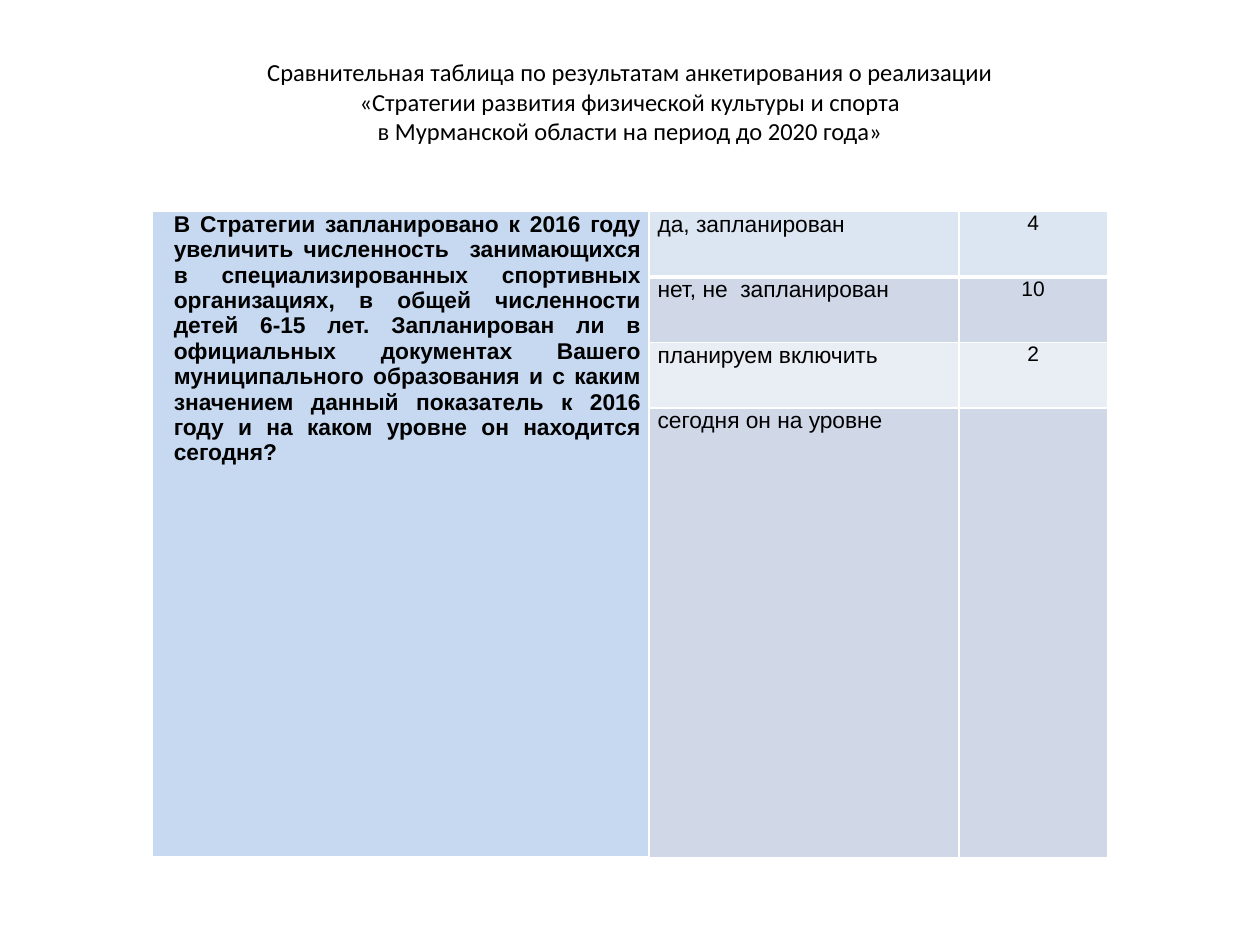
from dataclasses import dataclass

from lxml import etree
from pptx import Presentation
from pptx.dml.color import RGBColor
from pptx.enum.text import MSO_ANCHOR, MSO_AUTO_SIZE, PP_ALIGN
from pptx.oxml.ns import qn
from pptx.table import _Cell
from pptx.util import Inches, Pt

BLACK = RGBColor(0x00, 0x00, 0x00)
WHITE = RGBColor(0xFF, 0xFF, 0xFF)
QUESTION_BLUE = RGBColor(0xC6, 0xD9, 0xF1)
FIRST_BLUE = RGBColor(0xDC, 0xE6, 0xF2)
DARK_BAND = RGBColor(0xD0, 0xD8, 0xE8)
LIGHT_BAND = RGBColor(0xE9, 0xED, 0xF4)

LEFT, CENTER, JUSTIFY = PP_ALIGN.LEFT, PP_ALIGN.CENTER, PP_ALIGN.JUSTIFY
MIDDLE = MSO_ANCHOR.MIDDLE
NO_AUTOFIT = MSO_AUTO_SIZE.NONE

SLIDE_WIDTH, SLIDE_HEIGHT = Inches(10), Inches(7.5)
COLUMN_WIDTHS = (3.94, 2.46, 1.18)
ROW_HEIGHTS = (0.52, 0.52, 0.52, 3.57)

TITLE_LINES = (
    "Сравнительная таблица по результатам анкетирования о реализации",
    "«Стратегии развития физической культуры и спорта",
    "в Мурманской области на период до 2020 года»",
)
QUESTION = (
    "В Стратегии запланировано к 2016 году увеличить численность  занимающихся "
    "в специализированных спортивных организациях, в общей численности детей "
    "6-15 лет. Запланирован ли в официальных документах Вашего муниципального "
    "образования и с каким значением данный показатель к 2016 году и на каком "
    "уровне он находится сегодня?"
)


@dataclass
class Answer:
    label: str
    count: str
    fill: RGBColor


ANSWERS = (
    Answer("да, запланирован", "4", FIRST_BLUE),
    Answer("нет, не  запланирован", "10", DARK_BAND),
    Answer("планируем включить", "2", LIGHT_BAND),
    Answer("сегодня он на уровне", "", DARK_BAND),
)


def add_run(paragraph, text: str, size: float, font: str, bold: bool = False) -> None:
    run = paragraph.add_run()
    run.text = text
    run.font.size = Pt(size)
    run.font.name = font
    run.font.bold = bold
    run.font.color.rgb = BLACK


def style_cell(cell: _Cell, fill: RGBColor, bottom_width: float) -> None:
    """Set the insets, white borders and fill of one cell."""
    cell.margin_left = cell.margin_right = Inches(0.07)
    cell.margin_top = cell.margin_bottom = 0
    properties = cell._tc.get_or_add_tcPr()
    widths = {"a:lnL": 1, "a:lnR": 1, "a:lnT": 1, "a:lnB": bottom_width}
    for tag, width in widths.items():
        line = etree.SubElement(properties, qn(tag), w=str(Pt(width)))
        line_fill = etree.SubElement(line, qn("a:solidFill"))
        etree.SubElement(line_fill, qn("a:srgbClr"), val=str(WHITE))
    cell.fill.solid()
    cell.fill.fore_color.rgb = fill


def write_cell(cell: _Cell, text: str, size: float, alignment: PP_ALIGN,
               bold: bool = False) -> None:
    paragraph = cell.text_frame.paragraphs[0]
    paragraph.alignment = alignment
    if text:
        add_run(paragraph, text, size, "Arial", bold)


def add_title(slide) -> None:
    title = slide.shapes.title
    title.left, title.top = int(SLIDE_WIDTH * 0.05), int(SLIDE_HEIGHT * 0.04)
    title.width, title.height = int(SLIDE_WIDTH * 0.9), Inches(1.25)
    frame = title.text_frame
    frame.auto_size = NO_AUTOFIT
    frame.vertical_anchor = MIDDLE
    frame.margin_bottom = Inches(0.29)
    paragraph = frame.paragraphs[0]
    paragraph.alignment = CENTER
    for index, line in enumerate(TITLE_LINES):
        if index:
            paragraph.add_line_break()
        add_run(paragraph, line, 14, "Calibri")


def add_survey_table(slide) -> None:
    table = slide.shapes.add_table(
        len(ROW_HEIGHTS), len(COLUMN_WIDTHS), Inches(1.21), Inches(1.68),
        Inches(sum(COLUMN_WIDTHS)), Inches(sum(ROW_HEIGHTS)),
    ).table
    for column, width in zip(table.columns, COLUMN_WIDTHS):
        column.width = Inches(width)
    for row, height in zip(table.rows, ROW_HEIGHTS):
        row.height = Inches(height)

    # Question, spanning all rows
    question = table.cell(0, 0)
    question.merge(table.cell(len(ANSWERS) - 1, 0))
    style_cell(question, QUESTION_BLUE, 3)
    write_cell(question, QUESTION, 13, JUSTIFY, bold=True)
    paragraph_properties = question.text_frame.paragraphs[0]._p.get_or_add_pPr()
    paragraph_properties.set("marL", str(Inches(0.1)))
    paragraph_properties.set("indent", "0")

    # Answers and their counts
    for row, answer in enumerate(ANSWERS):
        label, count = table.cell(row, 1), table.cell(row, 2)
        for cell in (label, count):
            style_cell(cell, answer.fill, 3 if row == 0 else 1)
        write_cell(label, answer.label, 13, LEFT)
        write_cell(count, answer.count, 12, CENTER)


def main() -> None:
    presentation = Presentation()
    presentation.slide_width, presentation.slide_height = SLIDE_WIDTH, SLIDE_HEIGHT
    slide = presentation.slides.add_slide(presentation.slide_layouts[5])
    add_title(slide)
    add_survey_table(slide)
    presentation.save("out.pptx")


if __name__ == "__main__":
    main()
